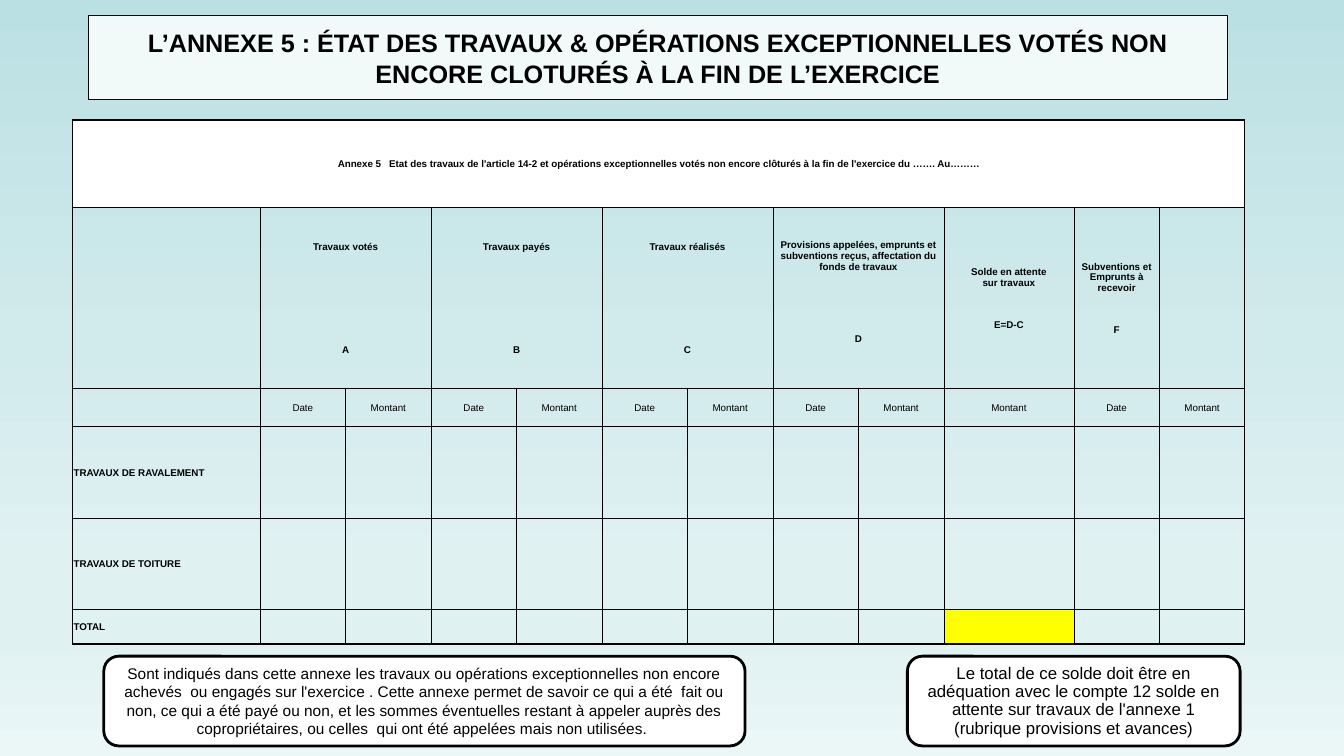
"""Build the slide on annex 5, the statement of voted works not yet closed."""
from dataclasses import dataclass

from lxml import etree
from pptx import Presentation
from pptx.dml.color import RGBColor
from pptx.enum.shapes import MSO_SHAPE
from pptx.enum.text import MSO_ANCHOR, MSO_AUTO_SIZE, PP_ALIGN
from pptx.oxml.ns import qn
from pptx.util import Inches, Pt

ROUNDED = MSO_SHAPE.ROUNDED_RECTANGLE
TOP, MIDDLE = MSO_ANCHOR.TOP, MSO_ANCHOR.MIDDLE
LEFT, CENTER = PP_ALIGN.LEFT, PP_ALIGN.CENTER
GROW = MSO_AUTO_SIZE.SHAPE_TO_FIT_TEXT


@dataclass(frozen=True)
class Theme:
    font: str = "Arial"
    ink: str = "000000"
    paper: str = "FFFFFF"
    title_fill: str = "F1F9F9"
    highlight: str = "FFFF00"
    sky: tuple = ((0, "BBE0E3"), (45, "D1EAEC"), (74, "E0F1F2"), (83, "E0F1F2"), (100, "EBF6F7"))
    title_size: float = 18
    table_size: float = 7
    outer_line: float = 1
    inner_line: float = 0.5


@dataclass(frozen=True)
class Heading:
    text: str
    span: int = 1
    anchor: MSO_ANCHOR = MIDDLE


@dataclass(frozen=True)
class Note:
    left: float
    width: float
    size: float
    text: str
    spacing: float | None = None


THEME = Theme()
TITLE = ("L’ANNEXE 5 : ÉTAT DES TRAVAUX & OPÉRATIONS EXCEPTIONNELLES VOTÉS NON "
         "ENCORE CLOTURÉS À LA FIN DE L’EXERCICE")
CAPTION = ("Annexe 5   Etat des travaux de l'article 14-2 et opérations exceptionnelles "
           "votés non encore clôturés à la fin de l'exercice du ……. Au………")
HEADINGS = (
    Heading("Travaux votés\n\n\n\nA", 2),
    Heading("Travaux payés\n\n\n\nB", 2),
    Heading("Travaux réalisés\n\n\n\nC", 2),
    Heading("\nProvisions appelées, emprunts et subventions reçus, "
            "affectation du fonds de travaux\n\n\nD", 2, TOP),
    Heading("Solde en attente\nsur travaux\n\nE=D-C"),
    Heading("Subventions et\nEmprunts à recevoir\n\nF"),
)
SUBHEADINGS = ("Date", "Montant") * 4 + ("Montant", "Date", "Montant")
WORKS = ("TRAVAUX DE RAVALEMENT", "TRAVAUX DE TOITURE", "TOTAL")
ROW_HEIGHTS = (0.87, 1.79, 0.38, 0.91, 0.91, 0.34)
TABLE_LEFT, TABLE_TOP, TABLE_WIDTH = 0.72, 1.19, 11.63
LABEL_WIDTH, BALANCE_WIDTH, BALANCE_COL = 1.86, 1.29, 9
NOTES = (
    Note(1.03, 6.36, 11,
         "Sont indiqués dans cette annexe les travaux ou opérations exceptionnelles non encore "
         "achevés  ou engagés sur l'exercice . Cette annexe permet de savoir ce qui a été  fait "
         "ou non, ce qui a été payé ou non, et les sommes éventuelles restant à appeler auprès "
         "des copropriétaires, ou celles  qui ont été appelées mais non utilisées. "),
    Note(9, 3.3, 12,
         "Le total de ce solde doit être en adéquation avec le compte 12 solde en attente sur "
         "travaux de l'annexe 1 (rubrique provisions et avances)", 13),
)


def write(tf, text: str, size: float, bold: bool = False, align=CENTER) -> None:
    """Write one paragraph, turning each newline into a line break."""
    p = tf.paragraphs[0]
    p.alignment = align
    for i, line in enumerate(text.split("\n")):
        if i:
            p.add_line_break()
        r = p.add_run()
        r.text = line
        r.font.name, r.font.size, r.font.bold = THEME.font, Pt(size), bold
        r.font.color.rgb = RGBColor.from_string(THEME.ink)


def paint(sp, fill: str, line: float) -> None:
    """Give a shape a solid fill and a dark outline."""
    sp.fill.solid()
    sp.fill.fore_color.rgb = RGBColor.from_string(fill)
    sp.line.color.rgb = RGBColor.from_string(THEME.ink)
    sp.line.width = Pt(line)


def add_solid(parent, color: str) -> None:
    """Append a solid fill element."""
    fill = etree.SubElement(parent, qn("a:solidFill"))
    etree.SubElement(fill, qn("a:srgbClr"), val=color)


def set_background(s) -> None:
    """Fill the slide with the vertical gradient."""
    fill = s.background.fill
    fill.gradient()
    fill.gradient_angle = 270
    stops = next(s.background._cSld.iter(qn("a:gsLst")))
    for stop in list(stops):
        stops.remove(stop)
    for position, color in THEME.sky:
        stop = etree.SubElement(stops, qn("a:gs"), pos=str(position * 1000))
        etree.SubElement(stop, qn("a:srgbClr"), val=color)


def add_title(s) -> None:
    """Place and format the title."""
    sp = s.shapes.title
    sp.left, sp.top, sp.width, sp.height = (Inches(v) for v in (0.88, 0.22, 11.29, 0.71))
    paint(sp, THEME.title_fill, 0.75)
    sp.text_frame.word_wrap = True
    sp.text_frame.auto_size = GROW
    write(sp.text_frame, TITLE, THEME.title_size, True)


def format_cell(cell, row: int, col: int, last_row: int, last_col: int) -> None:
    """Set the margins, borders and fill of a cell from its place in the grid."""
    cell.margin_left = cell.margin_right = cell.margin_top = Inches(0.01)
    cell.margin_bottom = 0
    cell.vertical_anchor = MIDDLE
    tc_pr = cell._tc.get_or_add_tcPr()
    outer = {"L": col == 0, "R": col == last_col, "T": row <= 1, "B": row in (0, last_row)}
    for side, is_outer in outer.items():
        width = THEME.outer_line if is_outer else THEME.inner_line
        add_solid(etree.SubElement(tc_pr, qn(f"a:ln{side}"), w=str(Pt(width))), THEME.ink)
    if row == 0 or (row, col) == (last_row, BALANCE_COL):
        cell.fill.solid()
        color = THEME.highlight if row else THEME.paper
        cell.fill.fore_color.rgb = RGBColor.from_string(color)
    else:
        cell.fill.background()


def add_works_table(s) -> None:
    """Draw the table of works."""
    rows, cols = len(ROW_HEIGHTS), len(SUBHEADINGS) + 1
    table = s.shapes.add_table(rows, cols, Inches(TABLE_LEFT), Inches(TABLE_TOP),
                               Inches(TABLE_WIDTH), Inches(sum(ROW_HEIGHTS))).table
    table.first_row = table.horz_banding = False
    special = {0: LABEL_WIDTH, BALANCE_COL: BALANCE_WIDTH}
    regular = (TABLE_WIDTH - sum(special.values())) / (cols - len(special))
    for col in range(cols):
        table.columns[col].width = Inches(special.get(col, regular))
    for row, height in enumerate(ROW_HEIGHTS):
        table.rows[row].height = Inches(height)
        for col in range(cols):
            format_cell(table.cell(row, col), row, col, rows - 1, cols - 1)

    table.cell(0, 0).merge(table.cell(0, cols - 1))
    write(table.cell(0, 0).text_frame, CAPTION, THEME.table_size, True)
    col = 1
    for heading in HEADINGS:
        cell = table.cell(1, col)
        if heading.span > 1:
            cell.merge(table.cell(1, col + heading.span - 1))
        cell.vertical_anchor = heading.anchor
        write(cell.text_frame, heading.text, THEME.table_size, True)
        col += heading.span
    for col, text in enumerate(SUBHEADINGS, 1):
        write(table.cell(2, col).text_frame, text, THEME.table_size)
    for row, text in enumerate(WORKS, 3):
        write(table.cell(row, 0).text_frame, text, THEME.table_size, True, LEFT)


def add_note(s, note: Note) -> None:
    """Draw a rounded comment box under the table."""
    sp = s.shapes.add_shape(ROUNDED, Inches(note.left), Inches(6.51),
                            Inches(note.width), Inches(0.89))
    sp.shadow.inherit = False
    paint(sp, THEME.paper, 2)
    tf = sp.text_frame
    tf.word_wrap = True
    tf.vertical_anchor = MIDDLE
    write(tf, note.text, note.size)
    if note.spacing:
        tf.paragraphs[0].line_spacing = Pt(note.spacing)


def main() -> None:
    """Build and save the presentation."""
    prs = Presentation()
    prs.slide_width, prs.slide_height = Inches(13.33), Inches(7.5)
    s = prs.slides.add_slide(prs.slide_layouts[5])
    set_background(s)
    add_works_table(s)
    add_title(s)
    for note in NOTES:
        add_note(s, note)
    prs.save("out.pptx")


if __name__ == "__main__":
    main()
